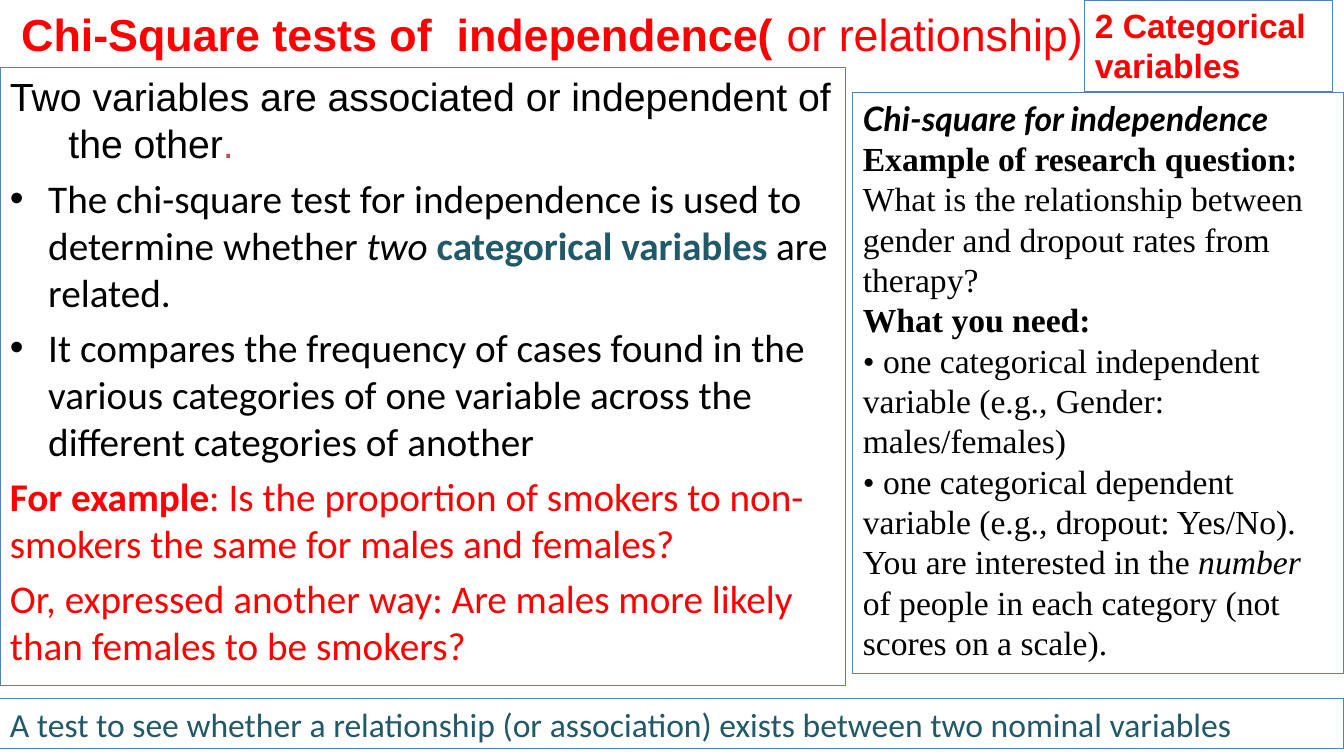
import pptx
import pptx.util
import pptx.dml.color
import pptx.enum.text
import pptx.enum.shapes
import pptx.oxml.ns
from dataclasses import dataclass
from lxml import etree

PX = 9144  # EMU in one px


@dataclass(frozen=True)
class Theme:
    red: str = "FF0000"
    teal: str = "215968"
    rust: str = "C0504D"
    ink: str = "000000"
    edge: str = "4F81BD"
    sans: str = "Arial"
    body: str = "Calibri"
    lead: str = "Lato"
    serif: str = "Times New Roman"
    head: int = 32
    main: int = 28
    side: int = 24


LOOK = Theme()


def px(n):
    return pptx.util.Emu(n * PX)


def rgb(code):
    return pptx.dml.color.RGBColor.from_string(code)


def place(shape, box):
    shape.left, shape.top, shape.width, shape.height = map(px, box)


def write(para, runs, size, font, color):
    """Each run is (text, style); style overrides the paragraph defaults."""
    for text, style in runs:
        run = para.add_run()
        run.text = text
        face = run.font
        face.size = pptx.util.Pt(size)
        face.name = style.get("font", font)
        face.bold = style.get("bold", False)
        face.italic = style.get("italic", False)
        face.color.rgb = rgb(style.get("color", color))


def indent(para, left, bullet=None):
    props = para._p.get_or_add_pPr()
    props.set("marL", str(left * PX))
    props.set("indent", str(-left * PX))
    if bullet:
        tag = etree.SubElement(props, pptx.oxml.ns.qn("a:buFont"))
        tag.set("typeface", "Arial")
    kind = "a:buChar" if bullet else "a:buNone"
    mark = etree.SubElement(props, pptx.oxml.ns.qn(kind))
    if bullet:
        mark.set("char", bullet)


def panel(slide, box, paras, size, font, color, space=0):
    """Outlined box; each paragraph is (runs, indent, bullet)."""
    shape = slide.shapes.add_shape(
        pptx.enum.shapes.MSO_SHAPE.RECTANGLE, *map(px, box))
    shape.shadow.inherit = False
    shape.fill.background()
    shape.line.color.rgb = rgb(LOOK.edge)
    shape.line.width = pptx.util.Pt(0.75)
    frame = shape.text_frame
    frame.word_wrap = True
    frame.vertical_anchor = pptx.enum.text.MSO_ANCHOR.TOP
    for i, (runs, left, bullet) in enumerate(paras):
        para = frame.add_paragraph() if i else frame.paragraphs[0]
        para.alignment = pptx.enum.text.PP_ALIGN.LEFT
        para.space_before = pptx.util.Pt(space if i else 0)
        indent(para, left, bullet)
        write(para, runs, size, font, color)


def title(slide, box):
    shape = slide.shapes.title
    place(shape, box)
    frame = shape.text_frame
    frame.word_wrap = False
    frame.auto_size = pptx.enum.text.MSO_AUTO_SIZE.NONE
    frame.vertical_anchor = pptx.enum.text.MSO_ANCHOR.TOP
    para = frame.paragraphs[0]
    para.alignment = pptx.enum.text.PP_ALIGN.LEFT
    runs = [("Chi-Square tests of  independence( ", {"bold": True}),
            ("or relationship)", {})]
    write(para, runs, LOOK.head, LOOK.sans, LOOK.red)


def theory(slide, box):
    sans = {"font": LOOK.sans}
    red = {"color": LOOK.red}
    paras = [
        ([("Two variables are associated or independent of the other", sans),
          (".", {**sans, "color": LOOK.rust})], 58, None),
        ([("The chi-square test for independence is used to determine "
           "whether ", {}),
          ("two ", {"italic": True}),
          ("categorical variables ", {"bold": True, "color": LOOK.teal}),
          ("are related.", {})], 38, "•"),
        ([("It compares the frequency of cases found in the various "
           "categories of one variable across the different categories "
           "of another", {})], 38, "•"),
        ([("For example", {**red, "bold": True}),
          (": Is the proportion of smokers to non-smokers the same for "
           "males and females?", red)], 0, None),
        ([("Or, expressed another way: Are males more likely than females "
           "to be smokers?", red)], 0, None),
    ]
    panel(slide, box, paras, LOOK.main, LOOK.body, LOOK.ink, space=5.6)


def example(slide, box):
    bold = {"bold": True}
    rows = [
        [("Chi-square for independence",
          {"font": LOOK.lead, "bold": True, "italic": True})],
        [("Example of research question: ", bold),
         ("What is the relationship between gender and dropout rates "
          "from therapy?", {})],
        [("What you need:", bold)],
        [("• one categorical independent variable (e.g., Gender: "
          "males/females)", {})],
        [("• one categorical dependent variable (e.g., dropout: Yes/No).",
          {})],
        [("You are interested in the ", {}), ("number ", {"italic": True}),
         ("of people in each category (not scores on a scale).", {})],
    ]
    paras = [(runs, 0, None) for runs in rows]
    panel(slide, box, paras, LOOK.side, LOOK.serif, LOOK.ink)


def label(slide, box, text, font, color, bold=False):
    paras = [([(text, {"bold": bold})], 0, None)]
    panel(slide, box, paras, LOOK.side, font, color)


def main():
    deck = pptx.Presentation()
    deck.slide_width, deck.slide_height = px(1333), px(750)
    slide = deck.slides.add_slide(deck.slide_layouts[5])
    # Main text and heading
    theory(slide, (0, 67, 839, 613))
    title(slide, (11, 2, 1080, 64))
    # Tag, summary strip and worked example
    label(slide, (1076, 0, 246, 91), "2 Categorical variables",
          LOOK.sans, LOOK.red, bold=True)
    label(slide, (0, 693, 1333, 50),
          "A test to see whether a relationship (or association) exists "
          "between two nominal variables", LOOK.body, LOOK.teal)
    example(slide, (846, 92, 487, 576))
    deck.save("out.pptx")


if __name__ == "__main__":
    main()
